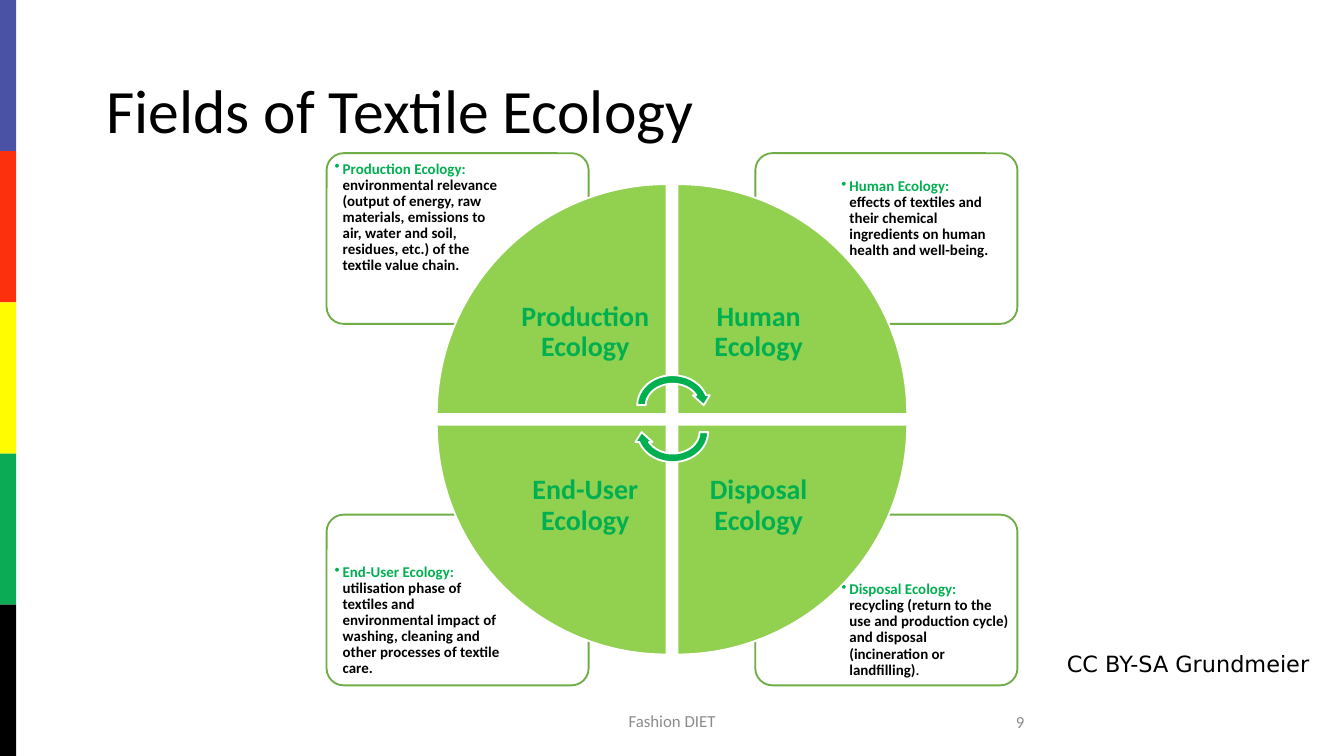
from dataclasses import dataclass
from typing import Any

import pptx
import pptx.dml.color
import pptx.enum.shapes
import pptx.enum.text
import pptx.oxml.ns
import pptx.util

Inches = pptx.util.Inches
Pt = pptx.util.Pt
MSO_SHAPE = pptx.enum.shapes.MSO_SHAPE
PP_ALIGN = pptx.enum.text.PP_ALIGN
MSO_ANCHOR = pptx.enum.text.MSO_ANCHOR

COLORS = {
    "violet": "4952A4",
    "red": "FC300D",
    "yellow": "FFFB00",
    "stripe_green": "0BAA54",
    "black": "000000",
    "white": "FFFFFF",
    "gray": "8C8C8C",
    "border": "70AD47",
    "wedge": "92D050",
    "accent": "00B050",
}
STRIPES = ("violet", "red", "yellow", "stripe_green", "black")
SLIDE_HEIGHT = 5.625
CARD_SIZE = (1.95, 1.27)
CARD_TEXT_SIZE = (1.31, 0.89)
WEDGE_SIZE = 1.71
LABEL_SIZE = 1.21
INDENT = 0.06


@dataclass
class Field:
    """One quadrant; column and row are 0 or 1, rotation is in degrees."""
    label: str
    column: int
    row: int
    rotation: int
    description: str
    text_drop: float = 0.0
    ending: str = ""


@dataclass
class Caption:
    text: str
    box: tuple[float, float, float, float]
    alignment: Any
    anchor: Any
    font: dict[str, Any]
    color: str


FIELDS = [
    Field("Disposal Ecology", 1, 1, 180,
          " recycling (return to the use and production cycle) and disposal "
          "(incineration or landfilling)", 0.13, "."),
    Field("End-User Ecology", 0, 1, 270,
          " utilisation phase of textiles and environmental impact of washing, "
          "cleaning and other processes of textile care."),
    Field("Human Ecology", 1, 0, 90,
          "\veffects of textiles and their chemical ingredients on human health "
          "and well-being.", 0.13),
    Field("Production Ecology", 0, 0, 0,
          " environmental relevance (output of energy, raw materials, emissions to "
          "air, water and soil, residues, etc.) of the textile value chain."),
]

SMALL = {"name": "Calibri", "size": Pt(9)}
CAPTIONS = [
    Caption("Fashion DIET", (3.31, 5.21, 3.38, 0.3), PP_ALIGN.CENTER,
            MSO_ANCHOR.MIDDLE, SMALL, "gray"),
    Caption("9", (5.47, 5.22, 2.25, 0.3), PP_ALIGN.RIGHT,
            MSO_ANCHOR.MIDDLE, SMALL, "gray"),
    Caption("CC BY-SA Grundmeier", (7.84, 4.79, 2.16, 0.3), PP_ALIGN.LEFT,
            MSO_ANCHOR.TOP, {"name": "DejaVu Sans", "size": Pt(12)}, "black"),
]


def rgb(color: str) -> Any:
    return pptx.dml.color.RGBColor.from_string(COLORS[color])


def apply_format(target: Any, values: dict[str, Any]) -> None:
    for name, value in values.items():
        setattr(target, name, value)


def format_font(font: Any, values: dict[str, Any], color: str) -> None:
    apply_format(font, values)
    font.color.rgb = rgb(color)


def add_filled_shape(slide: Any, kind: Any, box: tuple[float, ...], fill: str,
                     line: str | None = None, rotation: int = 0) -> Any:
    shape = slide.shapes.add_shape(kind, *map(Inches, box))
    shape.shadow.inherit = False
    shape.rotation = rotation
    shape.fill.solid()
    shape.fill.fore_color.rgb = rgb(fill)
    if line:
        shape.line.color.rgb = rgb(line)
        shape.line.width = Pt(1)
    else:
        shape.line.fill.background()
    return shape


def add_text_frame(slide: Any, box: tuple[float, ...], anchor: Any,
                   inset: float | None = None) -> Any:
    frame = slide.shapes.add_textbox(*map(Inches, box)).text_frame
    apply_format(frame, {"word_wrap": True, "vertical_anchor": anchor})
    if inset is not None:
        sides = ("left", "top", "right", "bottom")
        apply_format(frame, {f"margin_{side}": Inches(inset) for side in sides})
    return frame


def add_bullet(paragraph: Any) -> None:
    properties = paragraph._p.get_or_add_pPr()
    properties.set("marL", str(Inches(INDENT)))
    properties.set("indent", str(-Inches(INDENT)))
    color = pptx.oxml.parse_xml(
        f'<a:buClr {pptx.oxml.ns.nsdecls("a")}>'
        f'<a:srgbClr val="{COLORS["accent"]}"/></a:buClr>')
    bullet = pptx.oxml.parse_xml(
        f'<a:buChar {pptx.oxml.ns.nsdecls("a")} char="•"/>')
    properties.extend([color, bullet])


def add_card(slide: Any, field: Field) -> None:
    left, top = (2.43, 5.62)[field.column], (1.14, 3.83)[field.row]
    card = add_filled_shape(slide, MSO_SHAPE.ROUNDED_RECTANGLE,
                            (left, top, *CARD_SIZE), "white", "border")
    card.adjustments[0] = 0.1
    width, height = CARD_TEXT_SIZE
    box = ((2.46, 6.23)[field.column], (1.17, 4.17)[field.row] + field.text_drop,
           width, height - field.text_drop)
    paragraph = add_text_frame(slide, box, MSO_ANCHOR.TOP, 0.03).paragraphs[0]
    add_bullet(paragraph)
    paragraph.line_spacing = 0.9
    parts = [(f"{field.label}:", 8, "accent"), (field.description, 8, "black"),
             (field.ending, 7, "black")]
    for text, size, color in parts:
        if text.startswith("\v"):
            paragraph.add_line_break()
        if text:
            run = paragraph.add_run()
            run.text = text.lstrip("\v")
            format_font(run.font, {"name": "Calibri", "size": Pt(size), "bold": True},
                        color)


def add_wedge(slide: Any, field: Field) -> None:
    left, top = (3.25, 5.04)[field.column], (1.37, 3.16)[field.row]
    add_filled_shape(slide, MSO_SHAPE.PIE_WEDGE, (left, top, WEDGE_SIZE, WEDGE_SIZE),
                     "wedge", "white", field.rotation)
    inward = WEDGE_SIZE - LABEL_SIZE
    box = (left + inward * (1 - field.column), top + inward * (1 - field.row),
           LABEL_SIZE, LABEL_SIZE)
    paragraph = add_text_frame(slide, box, MSO_ANCHOR.MIDDLE, 0.12).paragraphs[0]
    paragraph.text = field.label
    apply_format(paragraph, {"alignment": PP_ALIGN.CENTER, "line_spacing": 0.9})
    format_font(paragraph.font, {"name": "Calibri", "size": Pt(15), "bold": True},
                "accent")


def add_caption(slide: Any, caption: Caption) -> None:
    paragraph = add_text_frame(slide, caption.box, caption.anchor).paragraphs[0]
    paragraph.text = caption.text
    paragraph.alignment = caption.alignment
    format_font(paragraph.font, caption.font, caption.color)


def add_title(slide: Any, text: str) -> None:
    title = slide.shapes.title
    apply_format(title, {"left": Inches(0.69), "top": Inches(0.3),
                         "width": Inches(8.62), "height": Inches(1.09)})
    frame = title.text_frame
    frame.text = text
    apply_format(frame, {"vertical_anchor": MSO_ANCHOR.MIDDLE,
                         "auto_size": pptx.enum.text.MSO_AUTO_SIZE.NONE})
    paragraph = frame.paragraphs[0]
    apply_format(paragraph, {"alignment": PP_ALIGN.LEFT, "line_spacing": 0.9})
    format_font(paragraph.font, {"name": "Calibri", "size": Pt(33)}, "black")


def main() -> None:
    presentation = pptx.Presentation()
    presentation.slide_width = Inches(10)
    presentation.slide_height = Inches(SLIDE_HEIGHT)
    slide = presentation.slides.add_slide(presentation.slide_layouts[5])
    stripe_height = SLIDE_HEIGHT / len(STRIPES)
    for index, color in enumerate(STRIPES):
        add_filled_shape(slide, MSO_SHAPE.RECTANGLE,
                         (0, index * stripe_height, 0.12, stripe_height), color)
    add_title(slide, "Fields of Textile Ecology")
    for caption in CAPTIONS:
        add_caption(slide, caption)
    for draw in (add_card, add_wedge):
        for field in FIELDS:
            draw(slide, field)
    for top, rotation in ((2.76, 0), (2.96, 180)):
        add_filled_shape(slide, MSO_SHAPE.CIRCULAR_ARROW, (4.71, top, 0.59, 0.51),
                         "accent", "white", rotation)
    presentation.save("out.pptx")


if __name__ == "__main__":
    main()
